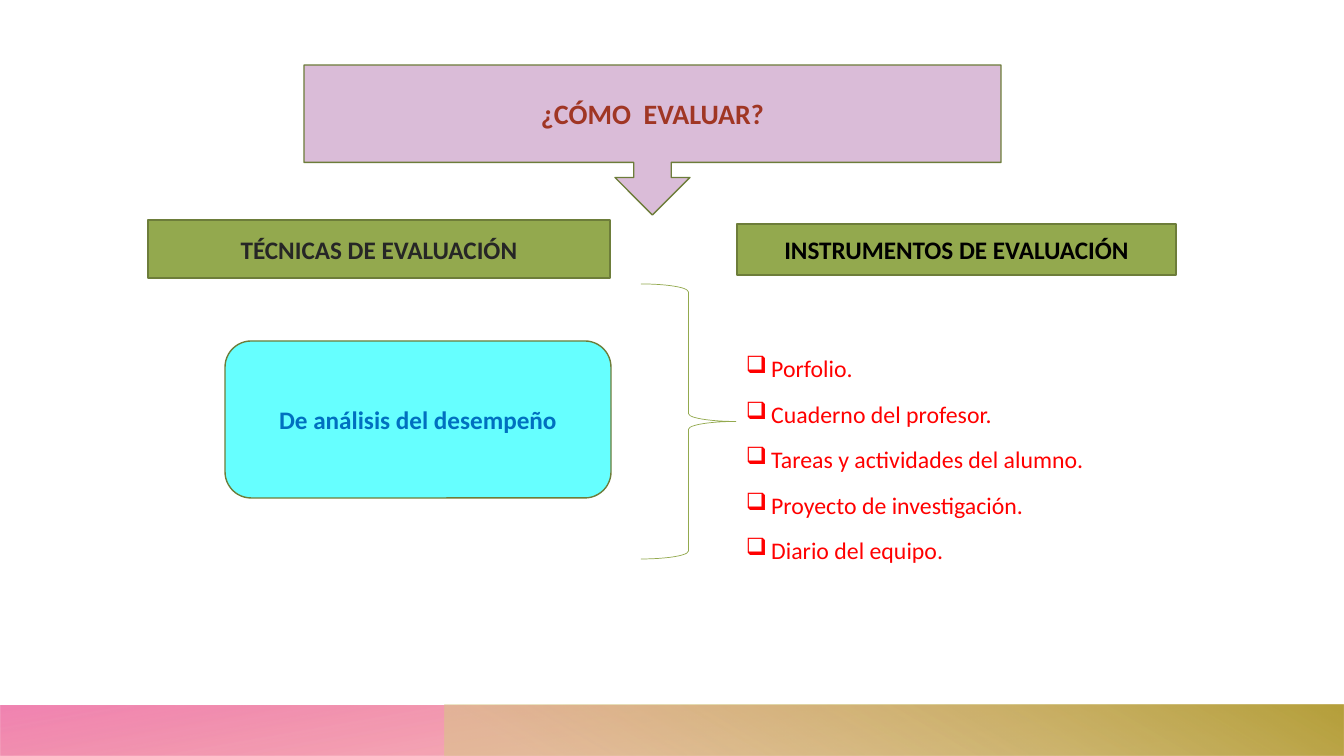
from dataclasses import dataclass

from lxml.etree import SubElement
from pptx import Presentation
from pptx.dml.color import RGBColor
from pptx.enum.shapes import MSO_SHAPE
from pptx.enum.text import MSO_ANCHOR, PP_ALIGN
from pptx.oxml.ns import qn
from pptx.util import Pt


@dataclass(frozen=True)
class Theme:
    font: str = "Calibri"
    title_size: int = 20
    label_size: int = 18
    list_size: int = 17
    outline: str = "6D7D3A"
    olive: str = "93A94E"
    lilac: str = "DABCD8"
    cyan: str = "66FFFF"
    rust: str = "A03624"
    blue: str = "0070C0"
    charcoal: str = "262626"
    black: str = "000000"
    red: str = "FF0000"
    pink_band: tuple = ((14, "EB4E4F", 28), (100, "EE6EA5", 85))
    gold_band: tuple = ((9, "D7C986", 55), (99, "B6A03C", 100))


class SlideBuilder:
    """Draws styled elements on one slide, with lengths in px."""

    WIDTH, HEIGHT = 1344, 756
    SCALE = 12192000 / WIDTH

    def __init__(self, prs, theme):
        self.theme = theme
        prs.slide_width = self.px(self.WIDTH)
        prs.slide_height = self.px(self.HEIGHT)
        self.s = prs.slides.add_slide(prs.slide_layouts[6])

    def px(self, n):
        return round(n * self.SCALE)

    def box(self, *at):
        return [self.px(n) for n in at]

    def style(self, r, size, color, bold=False):
        r.font.name = self.theme.font
        r.font.size = Pt(size)
        r.font.bold = bold
        r.font.color.rgb = RGBColor.from_string(color)

    def shape(self, kind, at, fill=None, line=None, width=1, flip=False):
        sp = self.s.shapes.add_shape(kind, *self.box(*at))
        sp.shadow.inherit = False
        if fill:
            sp.fill.solid()
            sp.fill.fore_color.rgb = RGBColor.from_string(fill)
        else:
            sp.fill.background()
        if line:
            sp.line.color.rgb = RGBColor.from_string(line)
            sp.line.width = Pt(width)
        else:
            sp.line.fill.background()
        if flip:
            sp._element.spPr.find(qn("a:xfrm")).set("flipH", "1")
        return sp

    def band(self, at, stops, angle, rotation=0):
        sp = self.shape(MSO_SHAPE.RECTANGLE, at, flip=True)
        sp.rotation = rotation
        sp.fill.gradient()
        sp.fill.gradient_angle = 360 - angle
        for stop, (position, color, opacity) in zip(sp.fill.gradient_stops, stops):
            stop.position = position / 100
            stop.color.rgb = RGBColor.from_string(color)
            rgb = stop._gs.find(qn("a:srgbClr"))
            SubElement(rgb, qn("a:alpha"), val=str(opacity * 1000))

    def label(self, kind, at, text, fill, color, size):
        sp = self.shape(kind, at, fill, self.theme.outline)
        tf = sp.text_frame
        tf.text = text
        tf.word_wrap = True
        tf.vertical_anchor = MSO_ANCHOR.MIDDLE
        p = tf.paragraphs[0]
        p.alignment = PP_ALIGN.CENTER
        self.style(p.runs[0], size, color, bold=True)

    def checklist(self, at, items):
        tf = self.s.shapes.add_textbox(*self.box(*at)).text_frame
        tf.word_wrap = True
        tf.margin_left = tf.margin_top = tf.margin_right = tf.margin_bottom = 0
        tf.text = "\n".join(items)
        for p in tf.paragraphs:
            p.line_spacing = 1.1
            p.space_before = Pt(10)
            pPr = p._p.get_or_add_pPr()
            pPr.set("marL", str(Pt(18)))
            pPr.set("indent", str(-Pt(18)))
            SubElement(pPr, qn("a:buChar"), char="❑")
            self.style(p.runs[0], self.theme.list_size, self.theme.red)


def main():
    prs = Presentation()
    t = Theme()
    b = SlideBuilder(prs, t)

    b.band((0, 705, 1344, 51), t.pink_band, 100, rotation=180)
    b.band((445, 705, 899, 51), t.gold_band, 240)

    b.checklist((746, 351, 413, 221), [
        "Porfolio.",
        "Cuaderno del profesor.",
        "Tareas y actividades del alumno.",
        "Proyecto de investigación.",
        "Diario del equipo.",
    ])
    b.label(MSO_SHAPE.DOWN_ARROW_CALLOUT, (304, 65, 697, 150),
            "¿CÓMO  EVALUAR?", t.lilac, t.rust, t.title_size)
    b.label(MSO_SHAPE.ROUNDED_RECTANGLE, (225, 341, 386, 157),
            "De análisis del desempeño", t.cyan, t.blue, t.label_size)
    b.label(MSO_SHAPE.RECTANGLE, (148, 220, 462, 58),
            "TÉCNICAS DE EVALUACIÓN", t.olive, t.charcoal, t.label_size)
    b.shape(MSO_SHAPE.LEFT_BRACE, (641, 284, 95, 275),
            line=t.olive, width=0.5, flip=True)
    b.label(MSO_SHAPE.RECTANGLE, (737, 224, 439, 51),
            "INSTRUMENTOS DE EVALUACIÓN", t.olive, t.black, t.label_size)

    prs.save("out.pptx")


if __name__ == "__main__":
    main()
